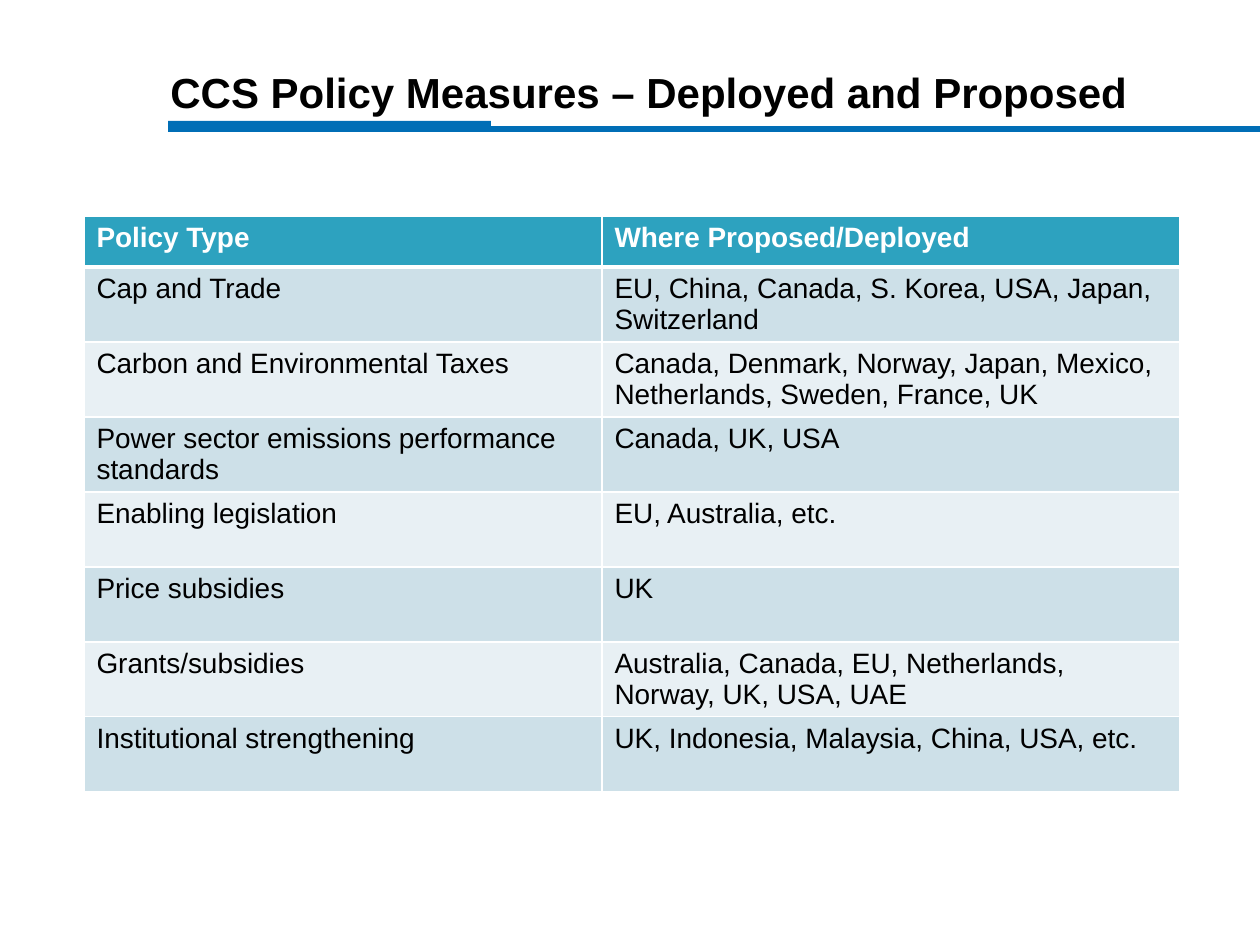
from lxml import etree
from pptx import Presentation
from pptx import util as u
from pptx.dml.color import RGBColor
from pptx.enum import shapes, text
from pptx.oxml.ns import qn

EMU_PER_PX = 914400 / 126

ROWS = [
    ("Policy Type", "Where Proposed/Deployed"),
    ("Cap and Trade", "EU, China, Canada, S. Korea, USA, Japan, Switzerland"),
    ("Carbon and Environmental Taxes",
     "Canada, Denmark, Norway, Japan, Mexico, Netherlands, Sweden, France, UK"),
    ("Power sector emissions performance standards", "Canada, UK, USA"),
    ("Enabling legislation", "EU, Australia, etc."),
    ("Price subsidies", "UK"),
    ("Grants/subsidies", "Australia, Canada, EU, Netherlands, Norway, UK, USA, UAE"),
    ("Institutional strengthening", "UK, Indonesia, Malaysia, China, USA, etc."),
]


def px(n):
    return u.Emu(round(n * EMU_PER_PX))


def rgb(value):
    return RGBColor.from_string(value)


class SlideBuilder:
    font = "Arial"
    ink, paper = "000000", "FFFFFF"
    rule_color, header_fill = "006EB6", "2DA2BF"
    bands = ("CDE0E8", "E8F0F4")

    def __init__(self, prs):
        self.s = prs.slides.add_slide(prs.slide_layouts[6])

    def add_text(self, tf, content, color, **formats):
        p = tf.paragraphs[0]
        r = p.add_run()
        r.text = content
        for name, value in {"name": self.font, **formats}.items():
            setattr(r.font, name, value)
        r.font.color.rgb = rgb(color)
        return p

    def bar(self, *box):
        sp = self.s.shapes.add_shape(shapes.MSO_SHAPE.RECTANGLE, *map(px, box))
        sp.shadow.inherit = False
        sp.fill.solid()
        sp.fill.fore_color.rgb = rgb(self.rule_color)
        sp.line.fill.background()

    def title(self, content, *box):
        tf = self.s.shapes.add_textbox(*map(px, box)).text_frame
        tf.word_wrap = True
        tf.vertical_anchor = text.MSO_ANCHOR.BOTTOM
        p = self.add_text(tf, content, self.ink, size=u.Pt(24), bold=True)
        p.line_spacing = u.Pt(27)

    def borders(self, cell, **widths):
        """Draw cell borders; widths in points, keyed L, R, T, B in that order."""
        tc_pr = cell._tc.get_or_add_tcPr()
        for side, width in widths.items():
            ln = etree.SubElement(tc_pr, qn(f"a:ln{side}"), w=str(u.Pt(width)))
            fill = etree.SubElement(ln, qn("a:solidFill"))
            etree.SubElement(fill, qn("a:srgbClr"), val=self.paper)

    def table(self, rows, left, top, widths, header_height, row_height):
        heights = [header_height] + [row_height] * (len(rows) - 1)
        box = (left, top, sum(widths), sum(heights))
        tbl = self.s.shapes.add_table(len(rows), len(widths), *map(px, box)).table
        for col, width in zip(tbl.columns, widths):
            col.width = px(width)
        for i, (row, height) in enumerate(zip(rows, heights)):
            tbl.rows[i].height = px(height)
            header = i == 0
            fill = self.header_fill if header else self.bands[(i - 1) % 2]
            for j, content in enumerate(row):
                cell = tbl.cell(i, j)
                self.borders(cell, L=1, R=1, T=3 if i == 1 else 1, B=3 if header else 1)
                cell.fill.solid()
                cell.fill.fore_color.rgb = rgb(fill)
                self.add_text(cell.text_frame, content, self.paper if header else self.ink,
                              size=u.Pt(16), bold=header)


def main():
    prs = Presentation()
    prs.slide_width, prs.slide_height = px(1260), px(945)
    slide = SlideBuilder(prs)
    slide.bar(168, 121, 323, 6)
    slide.bar(168, 126, 1092, 6)
    slide.table(ROWS, 84, 216, (518, 578), 51, 75)
    slide.title("CCS Policy Measures – Deployed and Proposed", 158, 24, 1102, 99)
    prs.save("out.pptx")


if __name__ == "__main__":
    main()
